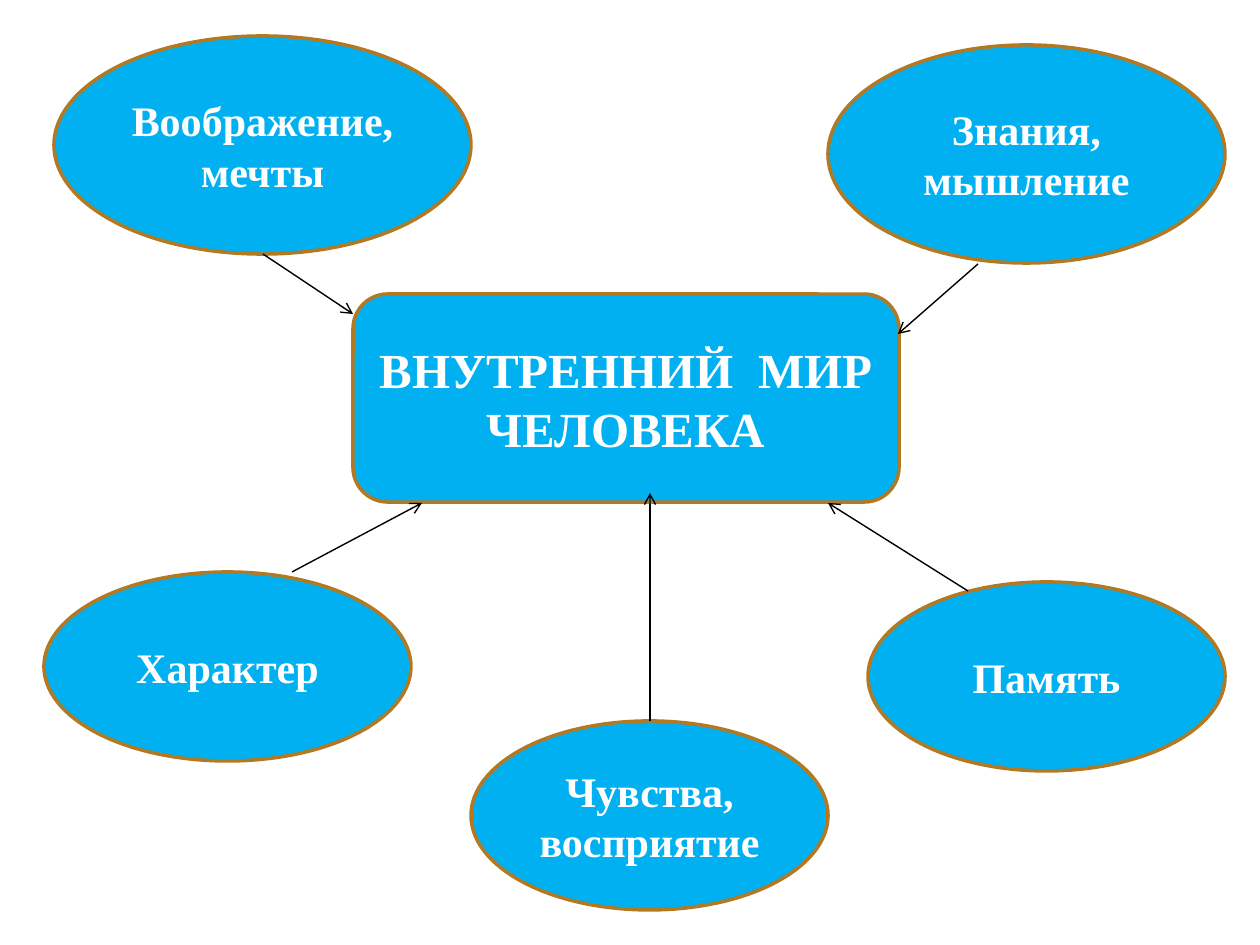
from dataclasses import dataclass

from lxml import etree
from pptx import Presentation
from pptx.dml.color import RGBColor
from pptx.enum.shapes import MSO_CONNECTOR, MSO_SHAPE
from pptx.enum.text import MSO_ANCHOR, PP_ALIGN
from pptx.oxml.ns import qn
from pptx.slide import Slide
from pptx.util import Pt

EMU_PER_PX = 914400 / 126
SLIDE_WIDTH, SLIDE_HEIGHT = 1260, 945
FONT = "Times New Roman"
COLORS = {"fill": "00B0F0", "border": "B27822", "text": "FFFFFF", "arrow": "000000"}

ELLIPSE = MSO_SHAPE.OVAL
ROUNDED_BOX = MSO_SHAPE.FLOWCHART_ALTERNATE_PROCESS
STRAIGHT = MSO_CONNECTOR.STRAIGHT
MIDDLE = MSO_ANCHOR.MIDDLE
CENTER = PP_ALIGN.CENTER


@dataclass(frozen=True)
class Concept:
    lines: tuple[str, ...]
    left: int
    top: int
    width: int
    height: int
    outline: MSO_SHAPE = ELLIPSE
    font_size: int = 24


@dataclass(frozen=True)
class Arrow:
    start: tuple[int, int]
    end: tuple[int, int]


CONCEPTS = (
    Concept(("ВНУТРЕННИЙ  МИР", "ЧЕЛОВЕКА"), 353, 294, 546, 208, ROUNDED_BOX, 28),
    Concept(("Воображение, мечты",), 54, 36, 417, 218),
    Concept(("Характер",), 44, 572, 367, 189),
    Concept(("Чувства, восприятие",), 471, 721, 357, 189),
    Concept(("Память",), 868, 582, 357, 189),
    Concept(("Знания, мышление",), 828, 45, 397, 218),
)

ARROWS = (
    Arrow((263, 254), (353, 314)),
    Arrow((978, 264), (898, 334)),
    Arrow((292, 572), (422, 503)),
    Arrow((650, 721), (650, 493)),
    Arrow((968, 591), (828, 503)),
)


def px(length: int) -> int:
    return round(length * EMU_PER_PX)


def color(role: str) -> RGBColor:
    return RGBColor.from_string(COLORS[role])


def draw_concept(slide: Slide, concept: Concept) -> None:
    box = (concept.left, concept.top, concept.width, concept.height)
    bubble = slide.shapes.add_shape(concept.outline, *map(px, box))
    bubble.shadow.inherit = False
    bubble.fill.solid()
    bubble.fill.fore_color.rgb = color("fill")
    bubble.line.color.rgb = color("border")
    bubble.line.width = Pt(2)

    label = bubble.text_frame
    label.word_wrap = True
    label.vertical_anchor = MIDDLE
    label.text = "\n".join(concept.lines)
    for paragraph in label.paragraphs:
        paragraph.alignment = CENTER
        paragraph.font.name = FONT
        paragraph.font.size = Pt(concept.font_size)
        paragraph.font.bold = True
        paragraph.font.color.rgb = color("text")


def draw_arrow(slide: Slide, arrow: Arrow) -> None:
    connector = slide.shapes.add_connector(STRAIGHT, *map(px, arrow.start + arrow.end))
    connector.line.color.rgb = color("arrow")
    connector.line.width = Pt(0.79)
    properties = connector.element.spPr
    etree.SubElement(properties.find(qn("a:ln")), qn("a:tailEnd"), type="arrow")
    etree.SubElement(properties, qn("a:effectLst"))


def main() -> None:
    deck = Presentation()
    deck.slide_width, deck.slide_height = px(SLIDE_WIDTH), px(SLIDE_HEIGHT)
    slide = deck.slides.add_slide(deck.slide_layouts[6])
    for concept in CONCEPTS:
        draw_concept(slide, concept)
    for arrow in ARROWS:
        draw_arrow(slide, arrow)
    deck.save("out.pptx")


if __name__ == "__main__":
    main()
